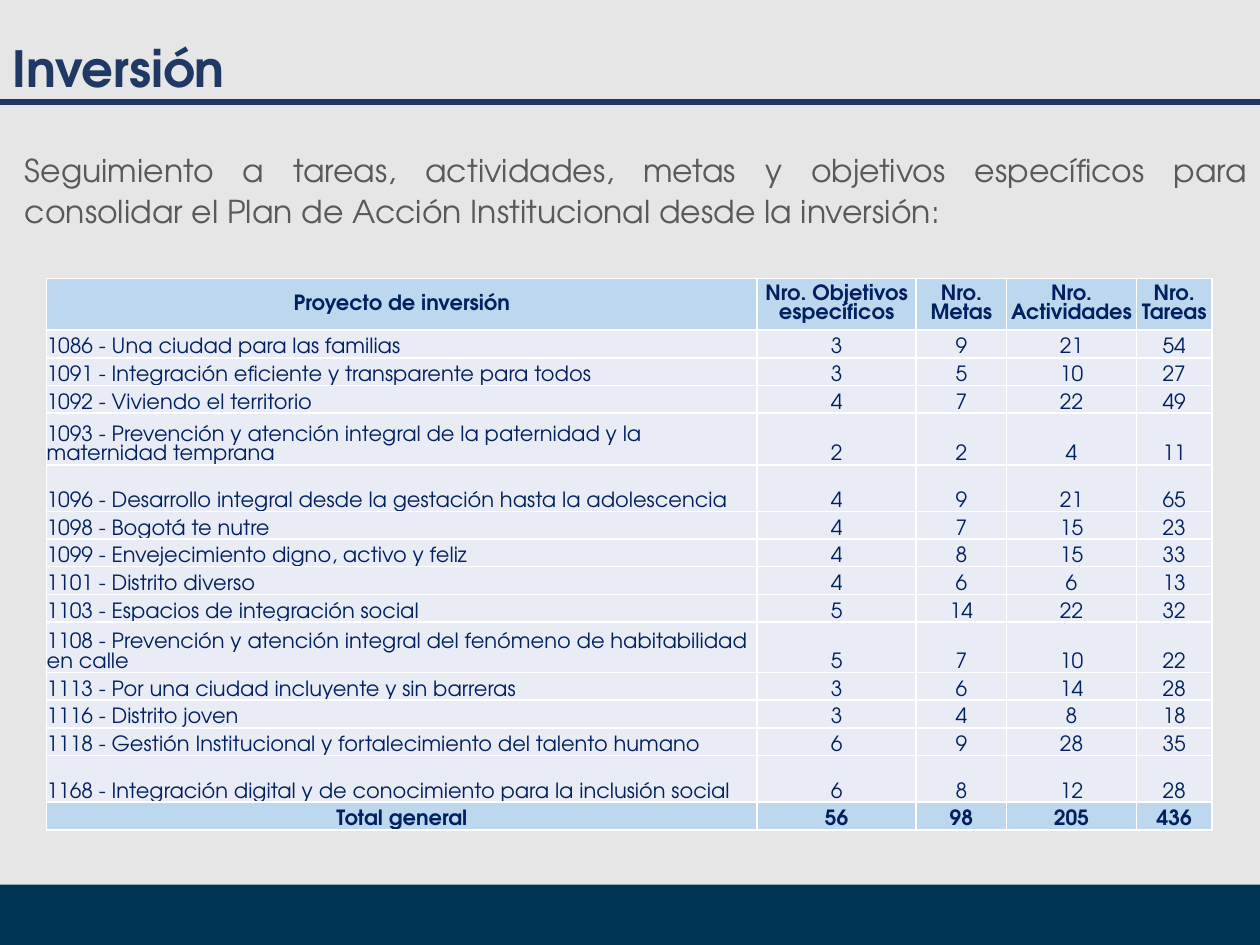
"""Builds the investment follow-up slide with its table of projects."""
from lxml import etree
from pptx import Presentation
from pptx.dml.color import RGBColor
from pptx.enum import shapes, text
from pptx.oxml import ns
from pptx.util import Inches, Pt

FONT = "TeX Gyre Adventor"
BACKGROUND = RGBColor(0xE7, 0xE6, 0xE6)
FOOTER = RGBColor(0x00, 0x34, 0x54)
TITLE = RGBColor(0x20, 0x38, 0x64)
BODY = RGBColor(0x59, 0x59, 0x59)
CELL_TEXT = RGBColor(0x00, 0x20, 0x60)
HEADER_FILL = RGBColor(0xBD, 0xD7, 0xEE)
ROW_FILL = RGBColor(0xE9, 0xEB, 0xF5)
BORDER = RGBColor(0xFF, 0xFF, 0xFF)

HEADINGS = ("Proyecto de inversión", "Nro. Objetivos específicos", "Nro. Metas",
            "Nro. Actividades", "Nro. Tareas")
PROJECTS = [
    ("1086 - Una ciudad para las familias", 3, 9, 21, 54),
    ("1091 - Integración eficiente y transparente para todos", 3, 5, 10, 27),
    ("1092 - Viviendo el territorio", 4, 7, 22, 49),
    ("1093 - Prevención y atención integral de la paternidad y la maternidad temprana",
     2, 2, 4, 11),
    ("1096 - Desarrollo integral desde la gestación hasta la adolescencia", 4, 9, 21, 65),
    ("1098 - Bogotá te nutre", 4, 7, 15, 23),
    ("1099 - Envejecimiento digno, activo y feliz", 4, 8, 15, 33),
    ("1101 - Distrito diverso", 4, 6, 6, 13),
    ("1103 - Espacios de integración social", 5, 14, 22, 32),
    ("1108 - Prevención y atención integral del fenómeno de habitabilidad en calle",
     5, 7, 10, 22),
    ("1113 - Por una ciudad incluyente y sin barreras", 3, 6, 14, 28),
    ("1116 - Distrito joven", 3, 4, 8, 18),
    ("1118 - Gestión Institucional y fortalecimiento del talento humano", 6, 9, 28, 35),
    ("1168 - Integración digital y de conocimiento para la inclusión social", 6, 8, 12, 28),
]
TOTALS = ("Total general", 56, 98, 205, 436)
COLUMN_WIDTHS = (5.64, 1.26, 0.72, 1.03, 0.6)
ROW_HEIGHT = 0.22
TALL_ROWS = {0: 0.41, 4: 0.41, 5: 0.37, 10: 0.37, 14: 0.37}


def write(paragraph, words, size, color, bold=False):
    run = paragraph.add_run()
    run.text = words
    run.font.name = FONT
    run.font.size = Pt(size)
    run.font.bold = bold
    run.font.color.rgb = color


def outline(cell):
    properties = cell._tc.get_or_add_tcPr()
    for position, side in enumerate(("a:lnL", "a:lnR", "a:lnT", "a:lnB")):
        line = etree.Element(ns.qn(side), w=str(Pt(1)))
        fill = etree.SubElement(line, ns.qn("a:solidFill"))
        etree.SubElement(fill, ns.qn("a:srgbClr"), val=str(BORDER))
        properties.insert(position, line)


prs = Presentation()
prs.slide_width = Inches(10)
prs.slide_height = Inches(7.5)
slide = prs.slides.add_slide(prs.slide_layouts[6])
slide.background.fill.solid()
slide.background.fill.fore_color.rgb = BACKGROUND

footer = slide.shapes.add_shape(shapes.MSO_SHAPE.RECTANGLE, Inches(0), Inches(7.02),
                                Inches(10), Inches(0.48))
footer.shadow.inherit = False
footer.fill.solid()
footer.fill.fore_color.rgb = FOOTER
footer.line.fill.background()

rule = slide.shapes.add_connector(shapes.MSO_CONNECTOR.STRAIGHT, Inches(0), Inches(0.81),
                                  Inches(10), Inches(0.81))
rule.line.color.rgb = TITLE
rule.line.width = Pt(3)
etree.SubElement(rule._element.spPr, ns.qn("a:effectLst"))

title = slide.shapes.add_textbox(Inches(0), Inches(0.28), Inches(6.47), Inches(0.51)).text_frame
title.word_wrap = True
title.vertical_anchor = text.MSO_ANCHOR.MIDDLE
write(title.paragraphs[0], "Inversión", 28.5, TITLE, bold=True)

intro = slide.shapes.add_textbox(Inches(0.1), Inches(1.13), Inches(9.9), Inches(0.72)).text_frame
intro.word_wrap = True
intro.auto_size = text.MSO_AUTO_SIZE.SHAPE_TO_FIT_TEXT
intro.paragraphs[0].alignment = text.PP_ALIGN.JUSTIFY
intro.paragraphs[0].line_spacing = 1.07
write(intro.paragraphs[0],
      "Seguimiento a tareas, actividades, metas y objetivos específicos para "
      "consolidar el Plan de Acción Institucional desde la inversión:", 18, BODY)

records = [HEADINGS, *PROJECTS, TOTALS]
row_heights = [TALL_ROWS.get(index, ROW_HEIGHT) for index in range(len(records))]
table = slide.shapes.add_table(len(records), len(HEADINGS), Inches(0.37), Inches(2.21),
                               Inches(sum(COLUMN_WIDTHS)), Inches(sum(row_heights))).table
for column, width in zip(table.columns, COLUMN_WIDTHS):
    column.width = Inches(width)
for row, height in zip(table.rows, row_heights):
    row.height = Inches(height)

for row_index, record in enumerate(records):
    emphasized = record in (HEADINGS, TOTALS)
    for column_index, value in enumerate(record):
        cell = table.cell(row_index, column_index)
        cell.margin_left = cell.margin_right = cell.margin_top = cell.margin_bottom = 0
        cell.vertical_anchor = (text.MSO_ANCHOR.MIDDLE if record is HEADINGS
                                else text.MSO_ANCHOR.BOTTOM)
        cell.fill.solid()
        cell.fill.fore_color.rgb = HEADER_FILL if emphasized else ROW_FILL
        outline(cell)
        paragraph = cell.text_frame.paragraphs[0]
        centered = emphasized or column_index > 0
        paragraph.alignment = text.PP_ALIGN.CENTER if centered else text.PP_ALIGN.LEFT
        write(paragraph, str(value), 12, CELL_TEXT, bold=emphasized)

prs.save("out.pptx")
